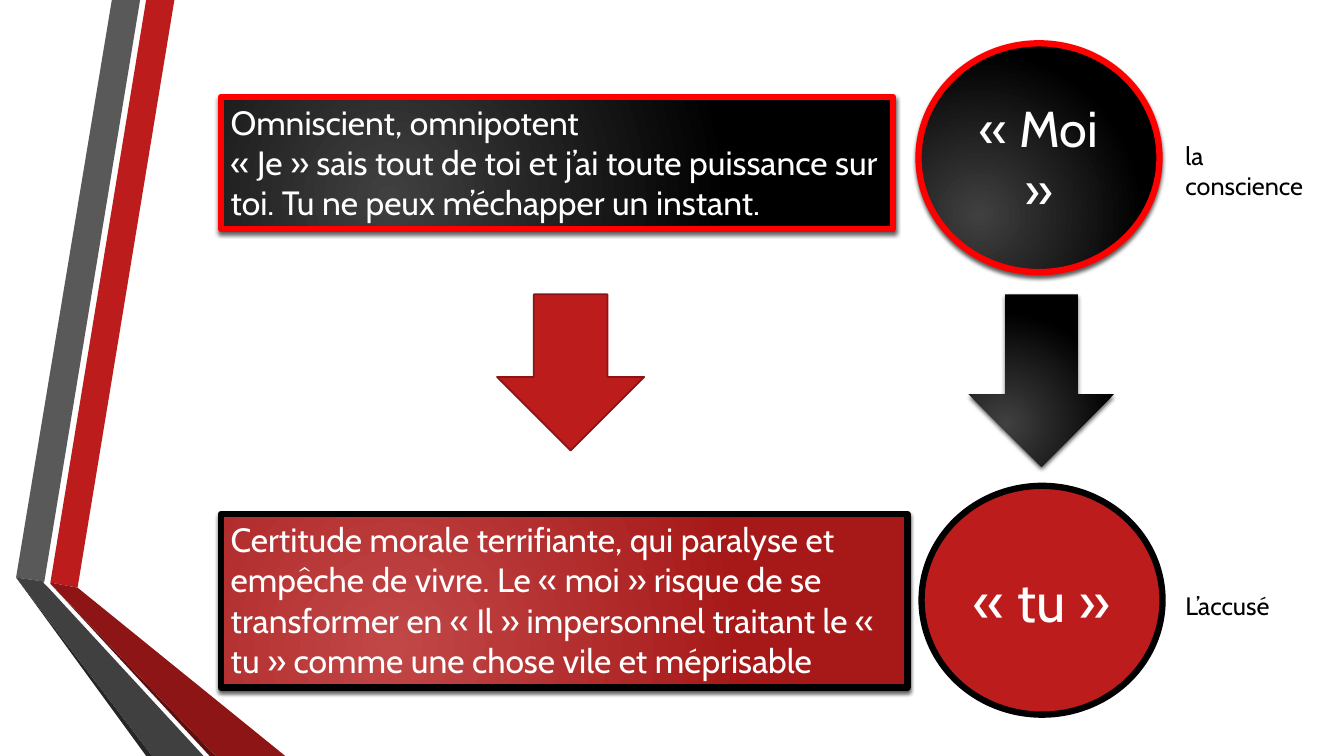
import pptx
import pptx.dml.color
import pptx.enum.shapes
import pptx.enum.text
import pptx.oxml
import pptx.oxml.ns
import pptx.util

Inches = pptx.util.Inches
Shapes = pptx.enum.shapes.MSO_SHAPE
Align = pptx.enum.text.PP_ALIGN
Anchor = pptx.enum.text.MSO_ANCHOR

theme = {
    "font": "Cabin",
    "white": "FFFFFF",
    "black": "000000",
    "red": "BC1C1C",
    "bright_red": "FF0000",
    "arrow_edge": "8B1515",
    "dark_glow": ("404040", "000000"),
    "red_glow": ("C14747", "A71919"),
    "label": 18,
    "body": 24,
    "me": 36,
    "you": 40,
    "border": 4.5,
    "thin": 1.25,
}


def paint(shape, fill, line=None, width=0, shadow=False):
    shape.shadow.inherit = False
    if isinstance(fill, tuple):
        shape.fill.gradient()
        for stop, colour in zip(shape.fill.gradient_stops, fill):
            stop.color.rgb = pptx.dml.color.RGBColor.from_string(colour)
        gradient = shape.element.spPr.find(pptx.oxml.ns.qn("a:gradFill"))
        gradient.remove(gradient.find(pptx.oxml.ns.qn("a:lin")))
        gradient.append(pptx.oxml.parse_xml(
            f'<a:path {pptx.oxml.ns.nsdecls("a")} path="circle">'
            '<a:fillToRect l="50000" t="100000" r="100000" b="50000"/></a:path>'))
    else:
        shape.fill.solid()
        shape.fill.fore_color.rgb = pptx.dml.color.RGBColor.from_string(fill)
    if line:
        shape.line.color.rgb = pptx.dml.color.RGBColor.from_string(line)
        shape.line.width = pptx.util.Pt(width)
    else:
        shape.line.fill.background()
    if shadow:
        effects = shape.element.spPr.find(pptx.oxml.ns.qn("a:effectLst"))
        effects.append(pptx.oxml.parse_xml(
            f'<a:outerShdw {pptx.oxml.ns.nsdecls("a")} blurRad="38100" dist="25400" '
            'dir="5400000" rotWithShape="0"><a:srgbClr val="000000">'
            '<a:alpha val="64000"/></a:srgbClr></a:outerShdw>'))


def write(shape, lines, size, colour, align=Align.LEFT, anchor=Anchor.TOP):
    frame = shape.text_frame
    for name, value in {"word_wrap": True, "vertical_anchor": anchor}.items():
        setattr(frame, name, value)
    for index, line in enumerate(lines):
        para = frame.add_paragraph() if index else frame.paragraphs[0]
        para.alignment = align
        span = para.add_run()
        span.text = line
        formats = {"name": theme["font"], "size": pptx.util.Pt(size)}
        for name, value in formats.items():
            setattr(span.font, name, value)
        span.font.color.rgb = pptx.dml.color.RGBColor.from_string(colour)


deck = pptx.Presentation()
deck.slide_width = Inches(13.33)
deck.slide_height = Inches(7.5)
page = deck.slides.add_slide(deck.slide_layouts[6])

ribbons = [
    (theme["red"], [(0.5, 5.78), (0.77, 5.83), (1.73, 0), (1.45, 0)]),
    ("595959", [(1.39, 0), (1.11, 0), (0.16, 5.73), (0.44, 5.77)]),
    ("262626", [(0.16, 5.73), (1.45, 7.5), (1.51, 7.5)]),
    ("5E0E0E", [(0.5, 5.79), (2.08, 7.5), (2.14, 7.5)]),
    ("8D1515", [(0.5, 5.79), (2.14, 7.5), (2.83, 7.5), (0.77, 5.83), (0.5, 5.78)]),
    ("404040", [(2.02, 7.5), (0.48, 5.83), (0.43, 5.78), (0.44, 5.77),
                (0.16, 5.73), (1.51, 7.5)]),
]
for colour, corners in ribbons:
    points = [(Inches(x), Inches(y)) for x, y in corners]
    builder = page.shapes.build_freeform(*points[0])
    builder.add_line_segments(points[1:], close=True)
    paint(builder.convert_to_shape(), colour)

circles = [
    (9.11, 0.43, "« Moi »", theme["me"], theme["dark_glow"], theme["bright_red"], True),
    (9.14, 4.82, "« tu »", theme["you"], theme["red"], theme["black"], False),
]
for left, top, word, size, fill, line, shadow in circles:
    circle = page.shapes.add_shape(
        Shapes.OVAL, Inches(left), Inches(top), Inches(2.39), Inches(2.27))
    paint(circle, fill, line, theme["border"], shadow)
    write(circle, [word], size, theme["white"], Align.CENTER, Anchor.MIDDLE)

panels = [
    (0.96, 6.67, 1.31, theme["dark_glow"], theme["bright_red"], [
        "Omniscient, omnipotent",
        "« Je » sais tout de toi et j’ai toute puissance sur toi. "
        "Tu ne peux m’échapper un instant."]),
    (5.1, 6.81, 1.72, theme["red_glow"], theme["black"], [
        "Certitude morale terrifiante, qui paralyse et empêche de vivre. "
        "Le « moi » risque de se transformer en « Il » impersonnel traitant "
        "le « tu » comme une chose vile et méprisable"]),
]
for top, width, height, fill, line, lines in panels:
    panel = page.shapes.add_shape(
        Shapes.RECTANGLE, Inches(2.19), Inches(top), Inches(width), Inches(height))
    paint(panel, fill, line, theme["border"], True)
    write(panel, lines, theme["body"], theme["white"])

arrows = [
    (9.61, 1.44, 1.71, theme["dark_glow"], None, True),
    (4.93, 1.46, 1.55, theme["red"], theme["arrow_edge"], False),
]
for left, width, height, fill, line, shadow in arrows:
    arrow = page.shapes.add_shape(
        Shapes.DOWN_ARROW, Inches(left), Inches(2.92), Inches(width), Inches(height))
    paint(arrow, fill, line, theme["thin"], shadow)

for top, width, label in [(1.34, 1.5, "la conscience"), (5.81, 1.06, "L’accusé")]:
    box = page.shapes.add_textbox(Inches(11.66), Inches(top), Inches(width), Inches(0.4))
    write(box, [label], theme["label"], theme["black"])

deck.save("out.pptx")
